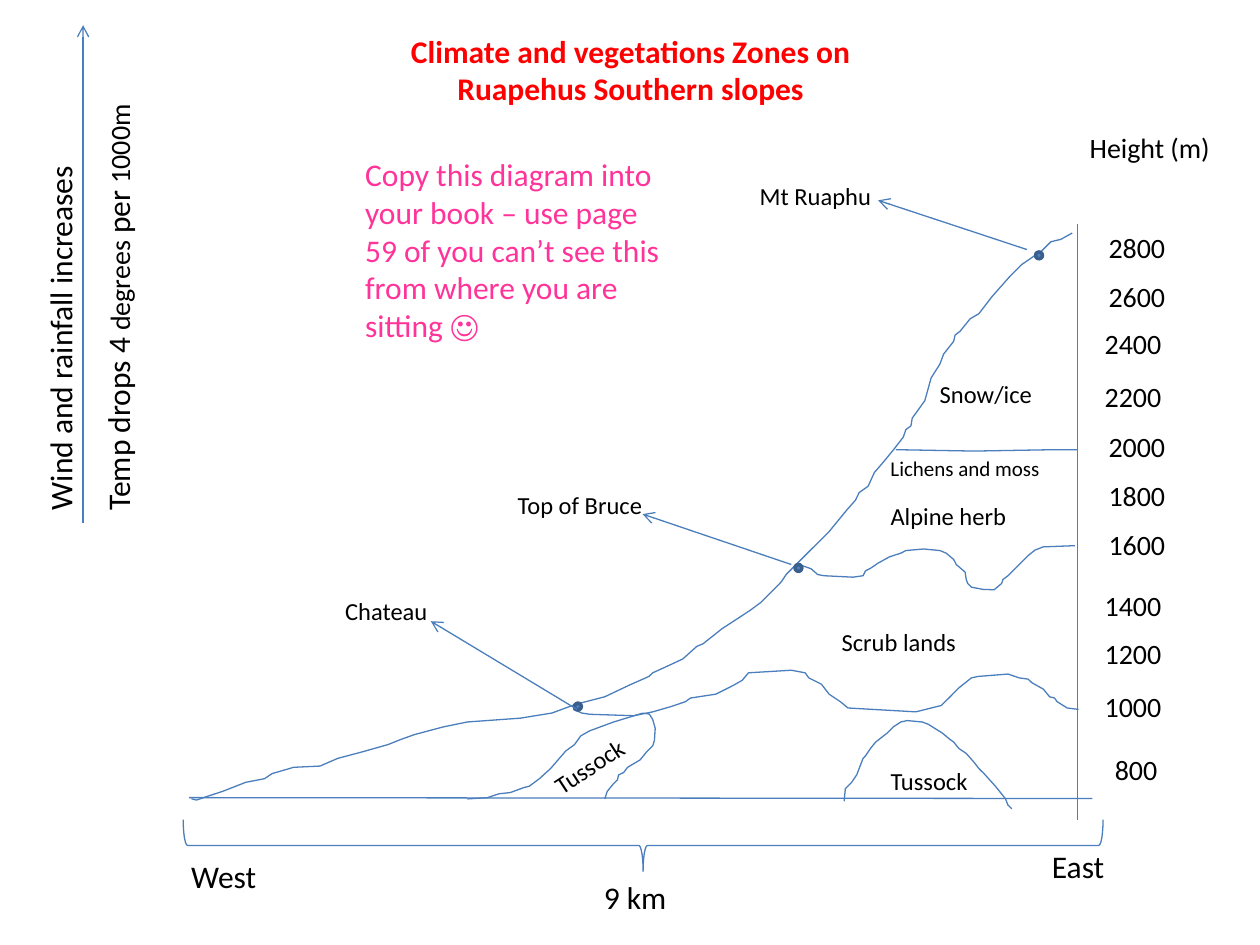
from pptx import Presentation
from pptx.dml.color import RGBColor
from pptx.enum.shapes import MSO_CONNECTOR as Connector, MSO_SHAPE as Shape
from pptx.enum.text import MSO_ANCHOR as Anchor, MSO_AUTO_SIZE as AutoSize, PP_ALIGN as Align
from pptx.oxml.ns import qn
from pptx.util import Pt
from lxml.etree import SubElement

BLACK = RGBColor(0x00, 0x00, 0x00)
RED = RGBColor(0xFF, 0x00, 0x00)
PINK = RGBColor(0xFF, 0x33, 0x99)
LINE_BLUE = RGBColor(0x4B, 0x7E, 0xBC)
DOT_BLUE = RGBColor(0x4F, 0x81, 0xBD)
DOT_EDGE = RGBColor(0x3A, 0x5F, 0x8C)
FONT = "Calibri"

TITLE = "Climate and vegetations Zones on Ruapehus Southern slopes"
TASK = ("Copy this diagram into your book – use page 59 of you can’t see this "
        "from where you are sitting ☺")

# height in metres, left, top
HEIGHTS = [
    (2800, 626.4, 128.2), (2600, 626.4, 156.2), (2400, 624.2, 182.9),
    (2200, 624.2, 213.1), (2000, 626.4, 241.9), (1800, 626.4, 270),
    (1600, 626.4, 298.1), (1400, 624.2, 332.6), (1200, 624.2, 360),
    (1000, 624.2, 390.2), (800, 630, 426.2),
]
# text, left, top, width, height, size, rotation
LABELS = [
    ("West", 102.2, 486, 72, 29, 18, 0),
    ("East", 594, 480.2, 52, 29, 18, 0),
    ("Height (m)", 615.6, 71.3, 85, 27, 16, 0),
    ("Snow/ice", 529.9, 213.1, 85, 24, 14, 0),
    ("Lichens and moss", 501.8, 257, 114, 22, 12, 0),
    ("Scrub lands", 473.8, 355, 114, 24, 14, 0),
    ("Alpine herb", 501.8, 283, 85, 24, 14, 0),
    ("Tussock", 501.8, 434.2, 85, 24, 14, 0),
    ("Tussock", 305.3, 418.3, 85, 24, 14, 326.8),
    ("Mt Ruaphu", 427, 100.1, 142, 24, 14, 0),
    ("Top of Bruce", 288.7, 276.5, 142, 24, 14, 0),
    ("Chateau", 190.1, 337, 85, 24, 14, 0),
    ("Wind and rainfall increases", -79.2, 170.6, 227, 29, 18, 270),
]
TEMPERATURE = [("Temp drops 4 ", 18), ("degrees", 16), (" per ", 18), ("1000m", 16), (" ", 18)]

AXES = [(624.2, 456.3, 108, 455.8), (615.6, 468.7, 615.6, 128.2)]
ARROWS = [
    (586.8, 142.6, 501.8, 114.5), (452.2, 322.6, 367.2, 293.8),
    (329.8, 405.4, 246.2, 355), (47.5, 298.8, 47.5, 14.4),
]
PLACE_DOTS = [(591.8, 144), (454.3, 322.6), (328.3, 401.8)]
DOT_SIZE = 3.9

SLOPE = [
    (109.4, 456.5), (112.3, 457.2), (118.8, 455), (127.4, 452.2), (140.4, 447.1),
    (151.2, 445), (155.5, 442.1), (167.8, 438.5), (182.9, 437.8), (193, 433.4),
    (206.6, 429.8), (221.8, 425.5), (229, 422.6), (236.9, 419.8), (253.4, 415.4),
    (267.1, 412.6), (297.4, 410.4), (315.4, 407.5), (329, 402.5), (345.6, 398.2),
    (359.3, 391.7), (370.8, 386.6), (373, 384.5), (379.4, 381.6), (390.2, 376.6),
    (398.2, 369.4), (401.8, 367.9), (412.6, 359.3), (422.6, 352.8), (429.1, 348.5),
    (434.9, 344.2), (442.1, 337), (446.4, 332.6), (449.3, 328.3), (462.2, 315.4),
    (473.8, 303.8), (483.8, 291.6), (488.9, 285.8), (491, 281.5), (496.1, 277.9),
    (499.7, 270), (504.7, 264.2), (511.2, 256.3), (516.2, 249.8), (517.7, 245.5),
    (520.6, 243.4), (521.3, 239), (528.5, 229), (532.1, 216), (537.1, 208.1),
    (539.3, 202.3), (545, 195.1), (545.8, 191.5), (548.6, 189.4), (554.4, 182.2),
    (559.4, 179.3), (566.6, 169.9), (576.7, 158.4), (583.9, 151.2), (595.4, 143.3),
    (600.5, 138.2), (606.2, 136.8), (612.7, 133.2),
]
SNOW_LINE = [(511.9, 257), (556.6, 257.8), (602.6, 257), (615.6, 257)]
ALPINE_LINE = [
    (614.2, 311.8), (596.2, 312.5), (591.5, 314.3), (587.5, 317.5), (576, 329),
    (573.1, 331.2), (572.4, 333.4), (568.1, 337), (561.6, 336.8), (555.1, 335.5),
    (553, 333.4), (552.2, 331.2), (551.5, 326.9), (546.5, 322.6), (545, 319.7),
    (540.7, 316.1), (537.1, 314.6), (527.8, 313.7), (517.7, 314.6), (514.8, 316.1),
    (508.3, 318.2), (501.8, 321.8), (497.5, 324.7), (494.6, 326.2), (493.2, 329),
    (487.4, 329.8), (470.9, 329), (467.3, 328.3), (463.5, 325), (458.6, 323.3),
]
SCRUB_LINE = [
    (616.3, 405.4), (609.8, 404.6), (604.1, 401), (602.6, 398.9), (599.8, 398.2),
    (596.2, 393.8), (589.7, 390.2), (587.5, 388.1), (582.5, 387.4), (576, 385.2),
    (558.7, 386.6), (555.1, 387.4), (547.9, 393.1), (542.9, 398.2), (537.8, 403.2),
    (532.1, 404.6), (523.4, 406.8), (484.6, 404.6), (480.2, 401), (473.8, 396.7),
    (469.4, 391), (462.2, 387.4), (460.1, 384.5), (452.2, 383), (427.7, 384.5),
    (424.1, 388.8), (419, 391.7), (409, 396.7), (394.6, 398.9), (391.7, 401),
    (383, 403.9), (373, 406.8), (362.2, 409), (337, 408.2), (332.6, 407.5), (327.6, 405.4),
]
EAST_TUSSOCK = [
    (482.4, 457.9), (483.1, 450.7), (486.7, 447.1), (489.6, 442.8), (493.2, 433.4),
    (494.6, 432), (497.5, 427.7), (500.4, 424.1), (506.9, 419), (510.5, 415.4),
    (514.8, 412.6), (518.4, 411.8), (527, 412.6), (530.6, 414), (538.6, 419),
    (542.9, 422.6), (545, 424.1), (547.9, 427.7), (552.2, 430.6), (556.6, 435.6),
    (559.4, 439.2), (562.3, 442.1), (568.8, 449.3), (571.7, 452.9), (574.6, 456.5),
    (576, 460.1), (578.2, 462.2),
]
WEST_TUSSOCK = [
    (267.1, 456.5), (278.6, 455.8), (285.1, 453.6), (291.6, 452.9), (299.5, 450),
    (302.4, 449.3), (308.2, 445), (314.6, 439.2), (323.3, 429.1), (328.3, 425.5),
    (331.9, 420.5), (337, 417.6), (350.6, 412.6), (367.2, 407.5), (371, 408),
    (373, 411.1), (374.4, 416.2), (374, 423), (373, 426.2), (369.4, 429.8),
    (365.8, 434.2), (358.6, 438.5), (356.4, 441.4), (353.5, 442.8), (352.8, 445.7),
    (350.6, 447.8), (347, 452.2), (345.6, 456.5),
]
ZONE_OUTLINES = [SLOPE, SNOW_LINE, ALPINE_LINE, SCRUB_LINE, EAST_TUSSOCK, WEST_TUSSOCK]


def style_line(item, color=LINE_BLUE, width=0.75):
    item.line.color.rgb = color
    item.line.width = Pt(width)


def add_text(slide, spans, left, top, width, height, color=BLACK, align=Align.LEFT, rotation=0):
    """Add a one-paragraph box; spans holds (text, size) pairs."""
    box = slide.shapes.add_textbox(Pt(left), Pt(top), Pt(width), Pt(height))
    box.rotation = rotation
    box.text_frame.word_wrap = True
    para = box.text_frame.paragraphs[0]
    para.alignment = align
    for text, size in spans:
        span = para.add_run()
        span.text = text
        span.font.name, span.font.size = FONT, Pt(size)
        span.font.color.rgb = color


def add_line(slide, ends, arrow=False):
    line = slide.shapes.add_connector(Connector.STRAIGHT, *map(Pt, ends))
    style_line(line)
    if arrow:
        SubElement(line.line._get_or_add_ln(), qn("a:tailEnd"), type="arrow")
    SubElement(line._element.spPr, qn("a:effectLst"))


def add_outline(slide, points):
    start, *rest = [(Pt(x), Pt(y)) for x, y in points]
    builder = slide.shapes.build_freeform(*start)
    builder.add_line_segments(rest, close=False)
    outline = builder.convert_to_shape()
    outline.fill.background()
    outline.shadow.inherit = False
    style_line(outline)


def add_title(slide):
    title = slide.shapes.title
    title.left, title.top, title.width, title.height = map(Pt, (190.1, 14.4, 340.6, 51))
    frame = title.text_frame
    frame.text = TITLE
    frame.auto_size, frame.vertical_anchor = AutoSize.NONE, Anchor.TOP
    para = frame.paragraphs[0]
    para.alignment = Align.CENTER
    font = para.runs[0].font
    font.name, font.size, font.bold = FONT, Pt(18), True
    font.color.rgb = RED


def main():
    deck = Presentation()
    deck.slide_width, deck.slide_height = Pt(720), Pt(540)
    slide = deck.slides.add_slide(deck.slide_layouts[5])
    add_title(slide)

    for ends in AXES:
        add_line(slide, ends)
    for points in ZONE_OUTLINES:
        add_outline(slide, points)

    brace = slide.shapes.add_shape(Shape.LEFT_BRACE, Pt(352.8), Pt(220.3), Pt(29.5), Pt(525.6))
    brace.rotation = 270
    brace.fill.background()
    brace.shadow.inherit = False
    style_line(brace)

    for left, top in PLACE_DOTS:
        dot = slide.shapes.add_shape(Shape.OVAL, Pt(left), Pt(top), Pt(DOT_SIZE), Pt(DOT_SIZE))
        dot.fill.solid()
        dot.fill.fore_color.rgb = DOT_BLUE
        dot.shadow.inherit = False
        style_line(dot, DOT_EDGE, 2)
    for ends in ARROWS:
        add_line(slide, ends, arrow=True)

    for metres, left, top in HEIGHTS:
        add_text(slide, [(str(metres), 16)], left, top, 72, 27)
    for text, left, top, width, height, size, rotation in LABELS:
        add_text(slide, [(text, size)], left, top, width, height, rotation=rotation)
    add_text(slide, [("9 km", 18)], 306, 498.2, 113.8, 29, align=Align.CENTER)
    add_text(slide, TEMPERATURE, -103, 159.1, 340.6, 29, align=Align.CENTER, rotation=270)
    add_text(slide, [(TASK, 18)], 201.6, 85, 189.4, 116.6, color=PINK)

    deck.save("out.pptx")


if __name__ == "__main__":
    main()
